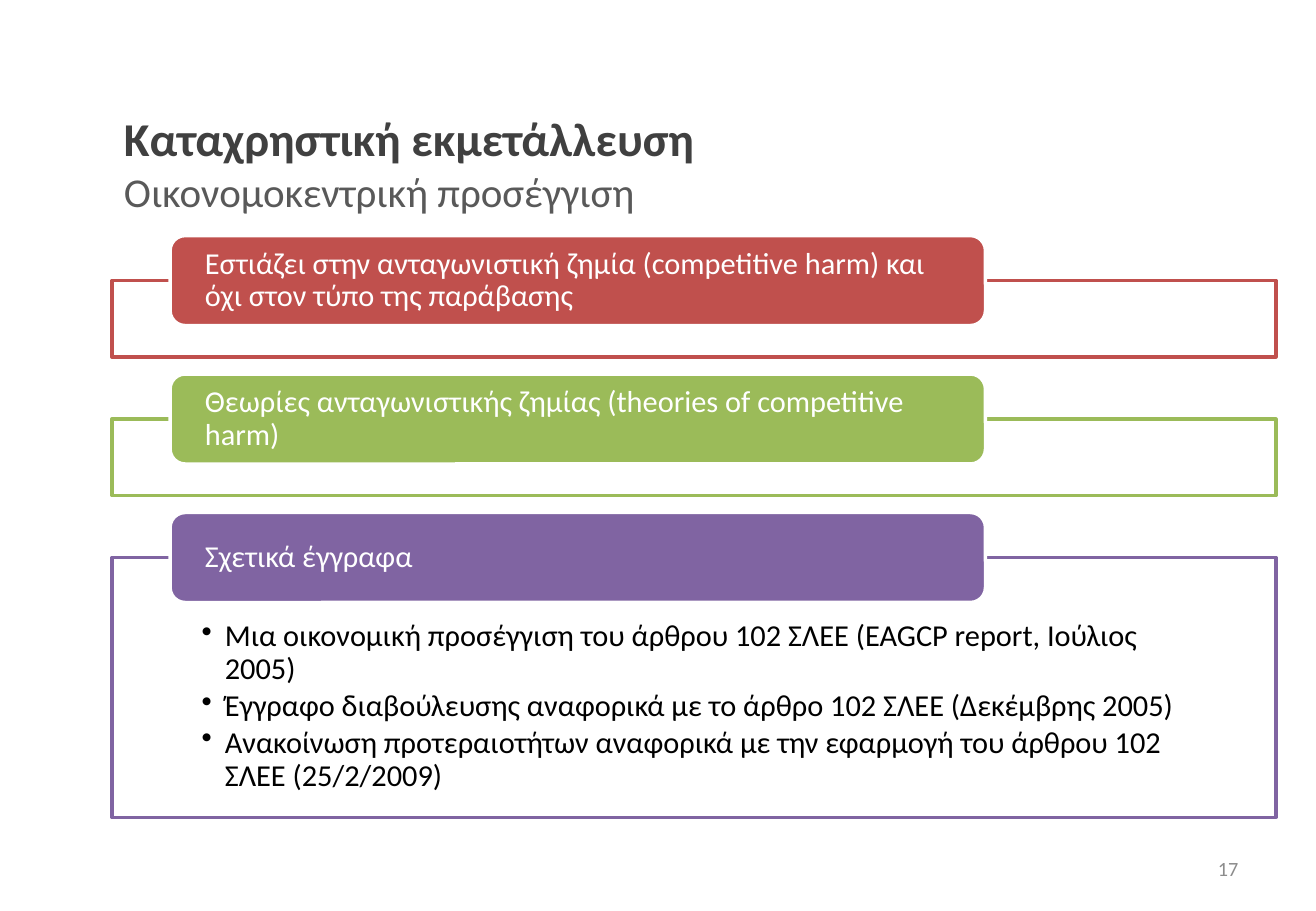
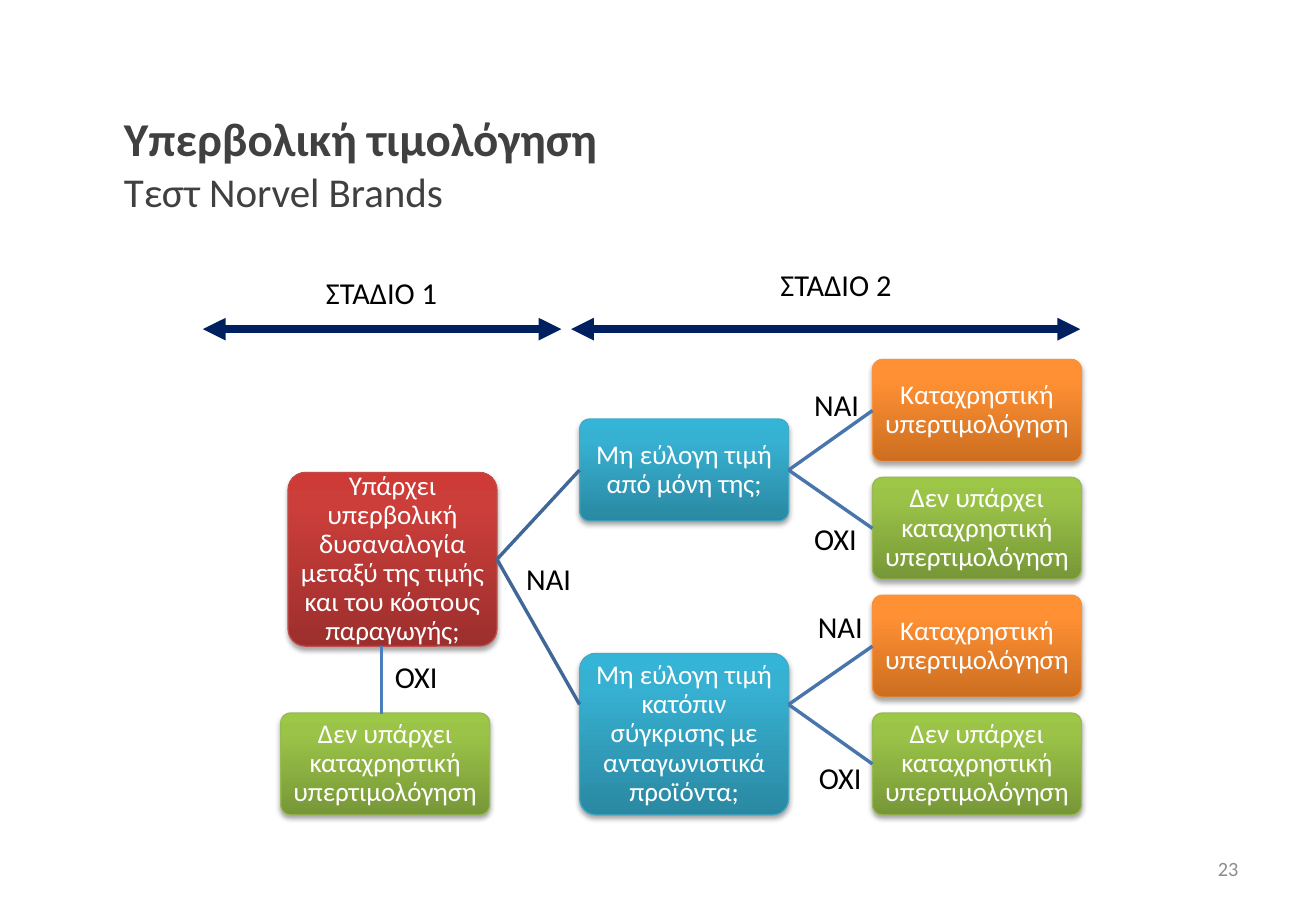
from lxml.etree import SubElement
from pptx import Presentation
from pptx.dml.color import RGBColor
from pptx.enum.shapes import MSO_CONNECTOR, MSO_SHAPE
from pptx.enum.text import MSO_ANCHOR, MSO_AUTO_SIZE, PP_ALIGN
from pptx.oxml.ns import qn
from pptx.util import Pt

PX = 9144
FONT = "Calibri"
HUES = {
    "white": "FFFFFF", "black": "000000", "head": "404040", "sub": "595959",
    "page": "8C8C8C", "navy": "002060", "rose": "C0504D", "lime": "9BBB59",
    "plum": "8064A2", "early": "3F6797", "late": "4875AC", "drop": "4B7EBC",
}
GRADS = {
    "red": ("9C2F2D", "CB3E3A", "CE3B37", "BF4C48"),
    "blue": ("2A88A2", "37B1D2", "34B4D6", "46AAC5"),
    "orange": ("CC6E20", "FF9034", "FF9136", "F69240"),
    "green": ("779737", "9BC348", "9DC746", "98B955"),
}
STOPS = (0, 0.8, 1)

CARDS = [
    ("rose", 63, "Εστιάζει στην ανταγωνιστική ζημία (competitive harm) και όχι στον τύπο της παράβασης", []),
    ("lime", 63, "Θεωρίες ανταγωνιστικής ζημίας (theories of competitive harm)", []),
    ("plum", 214, "Σχετικά έγγραφα", [
        "Μια οικονομική προσέγγιση του άρθρου 102 ΣΛΕΕ (EAGCP report, Ιούλιος 2005)",
        "Έγγραφο διαβούλευσης αναφορικά με το άρθρο 102 ΣΛΕΕ (Δεκέμβρης 2005)",
        "Ανακοίνωση προτεραιοτήτων αναφορικά με την εφαρμογή του άρθρου 102 ΣΛΕΕ (25/2/2009)",
    ]),
]

ABUSE = "Καταχρηστική υπερτιμολόγηση"
CLEAR = "Δεν υπάρχει καταχρηστική υπερτιμολόγηση"
NODES = {
    "gap": ("red", 237, 389, 143, "Υπάρχει υπερβολική δυσαναλογία μεταξύ της τιμής και του κόστους παραγωγής;"),
    "self": ("blue", 477, 345, 84, "Μη εύλογη τιμή από μόνη της;"),
    "peers": ("blue", 477, 538, 133, "Μη εύλογη τιμή κατόπιν σύγκρισης με ανταγωνιστικά προϊόντα;"),
    "yes1": ("orange", 718, 296, 84, ABUSE),
    "no1": ("green", 718, 393, 84, CLEAR),
    "yes2": ("orange", 718, 490, 84, ABUSE),
    "no2": ("green", 718, 587, 84, CLEAR),
    "stop": ("green", 231, 587, 84, CLEAR),
}
WIDE = 172
PORTS = {"gap": 72}
EDGES = [
    ("gap", "self", "early"), ("gap", "peers", "early"),
    ("self", "yes1", "late"), ("self", "no1", "late"),
    ("peers", "yes2", "late"), ("peers", "no2", "late"),
]
YES, NO = "ΝΑΙ", "ΟΧΙ"
SIGNS = [(YES, 409, 445), (YES, 646, 302), (NO, 645, 412),
         (YES, 649, 485), (NO, 649, 609), (NO, 300, 526)]
STAGES = [("ΣΤΑΔΙΟ 1", 257, 220, 167, 462), ("ΣΤΑΔΙΟ 2", 631, 213, 470, 889)]


def px(*nums):
    return [round(n * PX) for n in nums]


def rgb(code):
    return RGBColor.from_string(HUES.get(code, code))


def style(para, size, hue, align=PP_ALIGN.LEFT, pitch=None):
    para.alignment = align
    if pitch:
        para.line_spacing = pitch
    font = para.font
    font.name, font.size, font.color.rgb = FONT, Pt(size), rgb(hue)


def inset(frame, left, top, right, low):
    frame.margin_left, frame.margin_top, frame.margin_right, frame.margin_bottom = px(left, top, right, low)


def label(slide, text, box, size, hue, align=PP_ALIGN.CENTER):
    frame = slide.shapes.add_textbox(*px(*box)).text_frame
    frame.word_wrap = True
    frame.vertical_anchor = MSO_ANCHOR.MIDDLE
    frame.text = text
    style(frame.paragraphs[0], size, hue, align)


def block(slide, kind, box, fill, edge, width):
    shape = slide.shapes.add_shape(kind, *px(*box))
    shape.shadow.inherit = False
    if fill:
        shape.fill.solid()
        shape.fill.fore_color.rgb = rgb(fill)
    shape.line.color.rgb = rgb(edge)
    shape.line.width = Pt(width)
    shape.text_frame.word_wrap = True
    return shape


def line(slide, ends, hue, width, heads=False):
    link = slide.shapes.add_connector(MSO_CONNECTOR.STRAIGHT, *px(*ends))
    link.line.color.rgb = rgb(hue)
    link.line.width = Pt(width)
    props = link._element.spPr
    if heads:
        for tag in ("a:headEnd", "a:tailEnd"):
            SubElement(props.find(qn("a:ln")), qn(tag), type="triangle")
    SubElement(props, qn("a:effectLst"))
    return link


def start(deck, head, sub, hue, page):
    slide = deck.slides.add_slide(deck.slide_layouts[5])
    title = slide.shapes.title
    title.left, title.top, title.width, title.height = px(92, 86, 958, 96)
    frame = title.text_frame
    frame.auto_size = MSO_AUTO_SIZE.NONE
    frame.vertical_anchor = MSO_ANCHOR.MIDDLE
    para = frame.paragraphs[0]
    style(para, 27.9, "head")
    top = para.add_run()
    top.text, top.font.bold = head, True
    para.add_line_break()
    low = para.add_run()
    low.text, low.font.size, low.font.bold = sub, Pt(24.3), False
    low.font.color.rgb = rgb(hue)
    label(slide, page, (776, 695, 253, 40), 12, "page", PP_ALIGN.RIGHT)
    return slide


def cards(slide):
    top = 231
    for hue, high, head, items in CARDS:
        box = block(slide, MSO_SHAPE.RECTANGLE, (92, top, 958, high), "white", hue, 2)
        frame = box.text_frame
        frame.vertical_anchor = MSO_ANCHOR.TOP
        inset(frame, 74, 52, 74, 14)
        for i, item in enumerate(items):
            para = frame.add_paragraph() if i else frame.paragraphs[0]
            para.text = item
            props = para._p.get_or_add_pPr()
            props.set("marL", str(19 * PX))
            props.set("indent", str(-19 * PX))
            SubElement(props, qn("a:buChar"), char="•")
            para.space_after = Pt(2.4)
            style(para, 18, "black", pitch=0.9)
        pill = block(slide, MSO_SHAPE.ROUNDED_RECTANGLE, (140, top - 37, 671, 74), hue, "white", 2)
        frame = pill.text_frame
        frame.vertical_anchor = MSO_ANCHOR.MIDDLE
        inset(frame, 25, 0, 25, 0)
        frame.text = head
        style(frame.paragraphs[0], 18, "white", pitch=0.9)
        top += high + 51


def shade(shape, codes):
    fill = shape.fill
    fill.gradient()
    fill.gradient_angle = 90
    props = shape._element.spPr
    stops = props.find(".//" + qn("a:gsLst"))
    SubElement(SubElement(stops, qn("a:gs"), pos="100000"), qn("a:srgbClr"), val=codes[-1])
    for stop, place, code in zip(fill.gradient_stops, STOPS, codes):
        stop.position = place
        stop.color.rgb = rgb(code)
    cast = SubElement(props.find(qn("a:effectLst")), qn("a:outerShdw"),
                      blurRad=str(Pt(3.1)), dist=str(Pt(1.8)), dir="5400000", rotWithShape="0")
    SubElement(SubElement(cast, qn("a:srgbClr"), val=HUES["black"]), qn("a:alpha"), val="35000")


def tree(slide):
    shapes = {}
    for name, (kind, left, top, high, text) in NODES.items():
        *codes, edge = GRADS[kind]
        shape = block(slide, MSO_SHAPE.ROUNDED_RECTANGLE, (left, top, WIDE, high), None, edge, 0.75)
        shape.adjustments[0] = 0.1
        shade(shape, codes)
        frame = shape.text_frame
        frame.vertical_anchor = MSO_ANCHOR.MIDDLE
        inset(frame, 2, 2, 2, 2)
        frame.text = text
        style(frame.paragraphs[0], 16, "white", PP_ALIGN.CENTER, 0.9)
        shapes[name] = shape
    for a, b, hue in EDGES:
        (x, y), (u, v) = [(NODES[n][1], NODES[n][2] + PORTS.get(n, 42)) for n in (a, b)]
        link = line(slide, (x + WIDE, y, u, v), hue, 2)
        if a != "peers":
            link.begin_connect(shapes[a], 3)
        if b != "peers":
            link.end_connect(shapes[b], 1)
    line(slide, (314, 532, 314, 588), "drop", 2.25)
    for text, left, top in SIGNS:
        label(slide, text, (left, top, 85, 62), 18, "black")
    for text, left, top, x, u in STAGES:
        line(slide, (x, 271, u, 271), "navy", 4.5, True)
        label(slide, text, (left, top, 114, 42), 18, "black")


def main():
    deck = Presentation()
    deck.slide_width, deck.slide_height = px(1083, 750)
    cards(start(deck, "Καταχρηστική εκμετάλλευση", "Οικονομοκεντρική προσέγγιση", "sub", "17"))
    tree(start(deck, "Υπερβολική τιμολόγηση", "Τεστ Norvel Brands", "head", "23"))
    deck.save("out.pptx")


if __name__ == "__main__":
    main()
